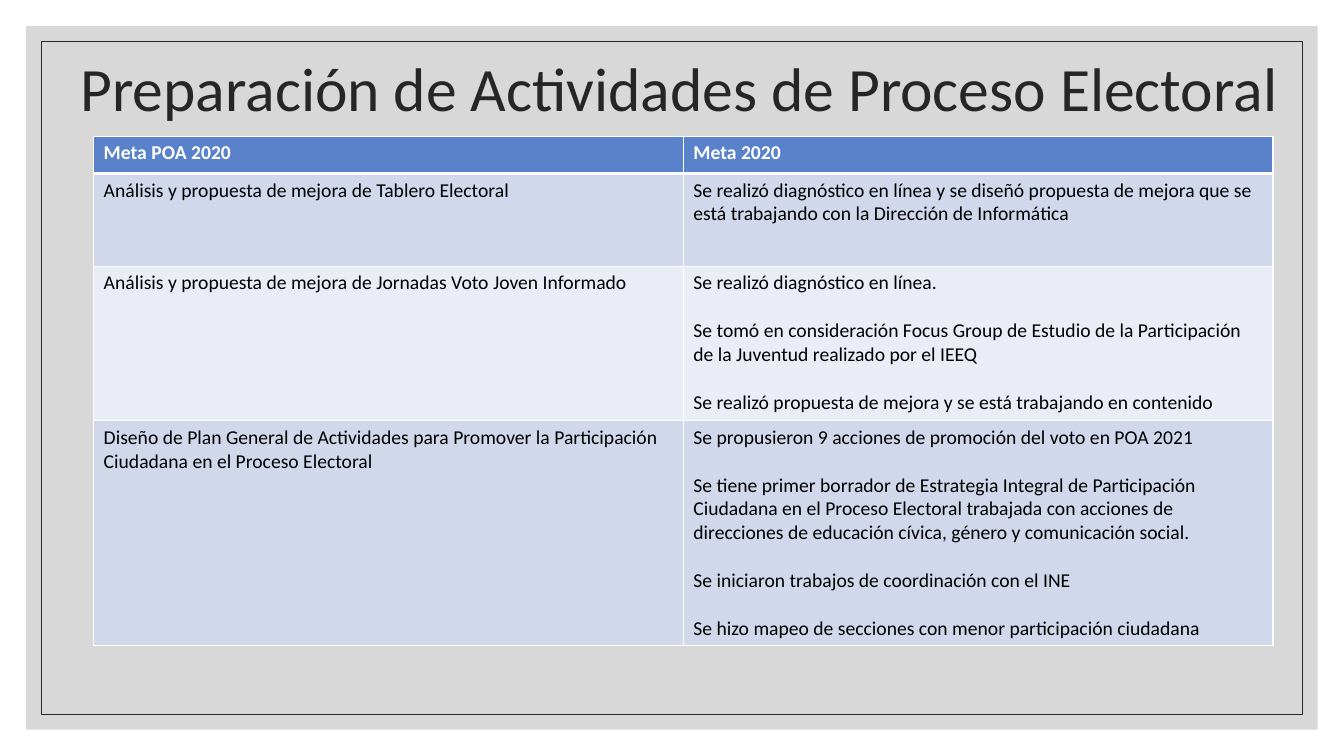
"""Build the slide on preparing the activities of the electoral process."""
from dataclasses import dataclass

from lxml import etree
from pptx import Presentation
from pptx.dml.color import RGBColor
from pptx.enum.shapes import MSO_SHAPE
from pptx.enum.text import MSO_ANCHOR
from pptx.oxml.ns import qn
from pptx.table import _Cell
from pptx.text.text import _Paragraph
from pptx.util import Cm, Pt

RECTANGLE = MSO_SHAPE.RECTANGLE
MIDDLE = MSO_ANCHOR.MIDDLE
SLIDE_W, SLIDE_H = 33.87, 19.05


@dataclass(frozen=True)
class Theme:
    font: str = "Calibri"
    title_size: int = 44
    body_size: int = 14
    paragraph_gap: int = 17
    dark: str = "262626"
    panel: str = "BFBFBF"
    panel_opacity: int = 60
    white: str = "FFFFFF"
    black: str = "000000"
    header: str = "5A82CB"
    bands: tuple[str, str] = ("D2D8EC", "EAEDF6")
    thin: int = 1
    thick: int = 3


@dataclass(frozen=True)
class Row:
    height: float
    goal: str
    progress: tuple[str, ...]


THEME = Theme()
TITLE = "Preparación de Actividades de Proceso Electoral"
ROWS = (
    Row(0.94, "Meta POA 2020", ("Meta 2020",)),
    Row(2.34, "Análisis y propuesta de mejora de Tablero Electoral", (
        "Se realizó diagnóstico en línea y se diseñó propuesta de mejora que se "
        "está trabajando con la Dirección de Informática",
    )),
    Row(3.89, "Análisis y propuesta de mejora de Jornadas Voto Joven Informado", (
        "Se realizó diagnóstico en línea.",
        "Se tomó en consideración Focus Group de Estudio de la Participación "
        "de la Juventud realizado por el IEEQ",
        "Se realizó propuesta de mejora y se está trabajando en contenido",
    )),
    Row(5.67, "Diseño de Plan General de Actividades para Promover la Participación "
        "Ciudadana en el Proceso Electoral", (
            "Se propusieron 9 acciones de promoción del voto en POA 2021",
            "Se tiene primer borrador de Estrategia Integral de Participación "
            "Ciudadana en el Proceso Electoral trabajada con acciones de "
            "direcciones de educación cívica, género y comunicación social.",
            "Se iniciaron trabajos de coordinación con el INE",
            "Se hizo mapeo de secciones con menor participación ciudadana",
        )),
)


def add_run(p: _Paragraph, text: str, size: int, color: str, bold: bool = False) -> None:
    r = p.add_run()
    r.text = text
    r.font.name = THEME.font
    r.font.size = Pt(size)
    r.font.bold = bold
    r.font.color.rgb = RGBColor.from_string(color)


def add_frame(s, margin: float, filled: bool) -> None:
    sp = s.shapes.add_shape(RECTANGLE, Cm(margin), Cm(margin),
                            Cm(SLIDE_W - 2 * margin), Cm(SLIDE_H - 2 * margin))
    sp.shadow.inherit = False
    if filled:
        sp.fill.solid()
        sp.fill.fore_color.rgb = RGBColor.from_string(THEME.panel)
        color = sp.fill._xPr.find(qn("a:solidFill"))[0]
        etree.SubElement(color, qn("a:alpha"), val=str(THEME.panel_opacity * 1000))
        sp.line.fill.background()
    else:
        sp.fill.background()
        sp.line.color.rgb = RGBColor.from_string(THEME.dark)
        sp.line.width = Pt(0.5)


def add_title(s) -> None:
    sp = s.shapes.add_textbox(Cm(1.78), Cm(1.17), Cm(30.91), Cm(2.26))
    tf = sp.text_frame
    tf.word_wrap = True
    tf.vertical_anchor = MIDDLE
    p = tf.paragraphs[0]
    p.line_spacing = 0.9
    add_run(p, TITLE, THEME.title_size, THEME.dark)


def set_borders(cell: _Cell, top: int, bottom: int) -> None:
    props = cell._tc.get_or_add_tcPr()
    widths = {"a:lnL": THEME.thin, "a:lnR": THEME.thin, "a:lnT": top, "a:lnB": bottom}
    for tag, width in widths.items():
        line = etree.SubElement(props, qn(tag), w=str(Pt(width)))
        fill = etree.SubElement(line, qn("a:solidFill"))
        etree.SubElement(fill, qn("a:srgbClr"), val=THEME.white)


def fill_cell(cell: _Cell, texts: tuple[str, ...], row: int) -> None:
    is_header = row == 0
    set_borders(cell, THEME.thick if row == 1 else THEME.thin,
                THEME.thick if is_header else THEME.thin)
    cell.fill.solid()
    background = THEME.header if is_header else THEME.bands[(row - 1) % 2]
    cell.fill.fore_color.rgb = RGBColor.from_string(background)
    tf = cell.text_frame
    for i, text in enumerate(texts):
        p = tf.add_paragraph() if i else tf.paragraphs[0]
        p.space_before = Pt(THEME.paragraph_gap if i else 0)
        add_run(p, text, THEME.body_size,
                THEME.white if is_header else THEME.black, is_header)


def add_goals_table(s) -> None:
    height = sum(row.height for row in ROWS)
    table = s.shapes.add_table(len(ROWS), 2, Cm(2.36), Cm(3.43),
                               Cm(29.72), Cm(height)).table
    for i, row in enumerate(ROWS):
        table.rows[i].height = Cm(row.height)
        fill_cell(table.cell(i, 0), (row.goal,), i)
        fill_cell(table.cell(i, 1), row.progress, i)


def main() -> None:
    prs = Presentation()
    prs.slide_width, prs.slide_height = Cm(SLIDE_W), Cm(SLIDE_H)
    s = prs.slides.add_slide(prs.slide_layouts[6])
    add_frame(s, 0.66, filled=True)
    add_frame(s, 1.04, filled=False)
    add_title(s)
    add_goals_table(s)
    prs.save("out.pptx")


if __name__ == "__main__":
    main()
